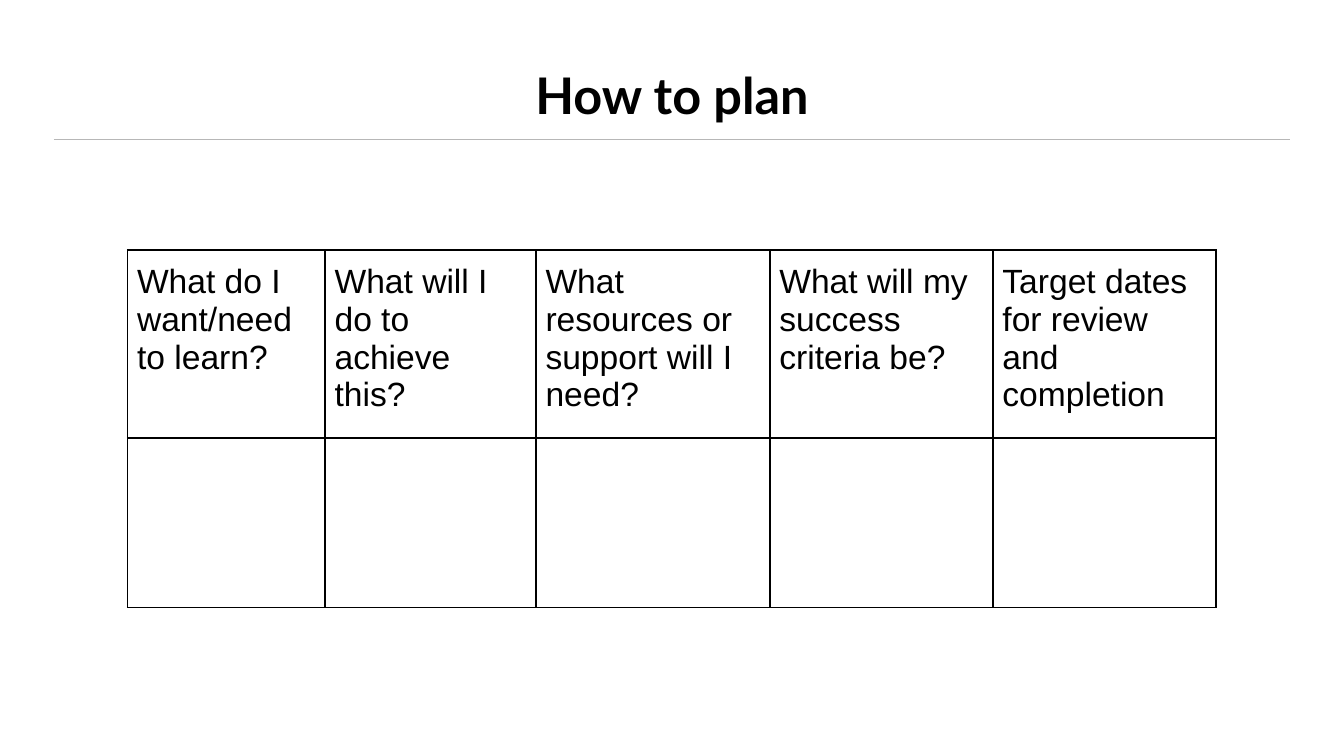
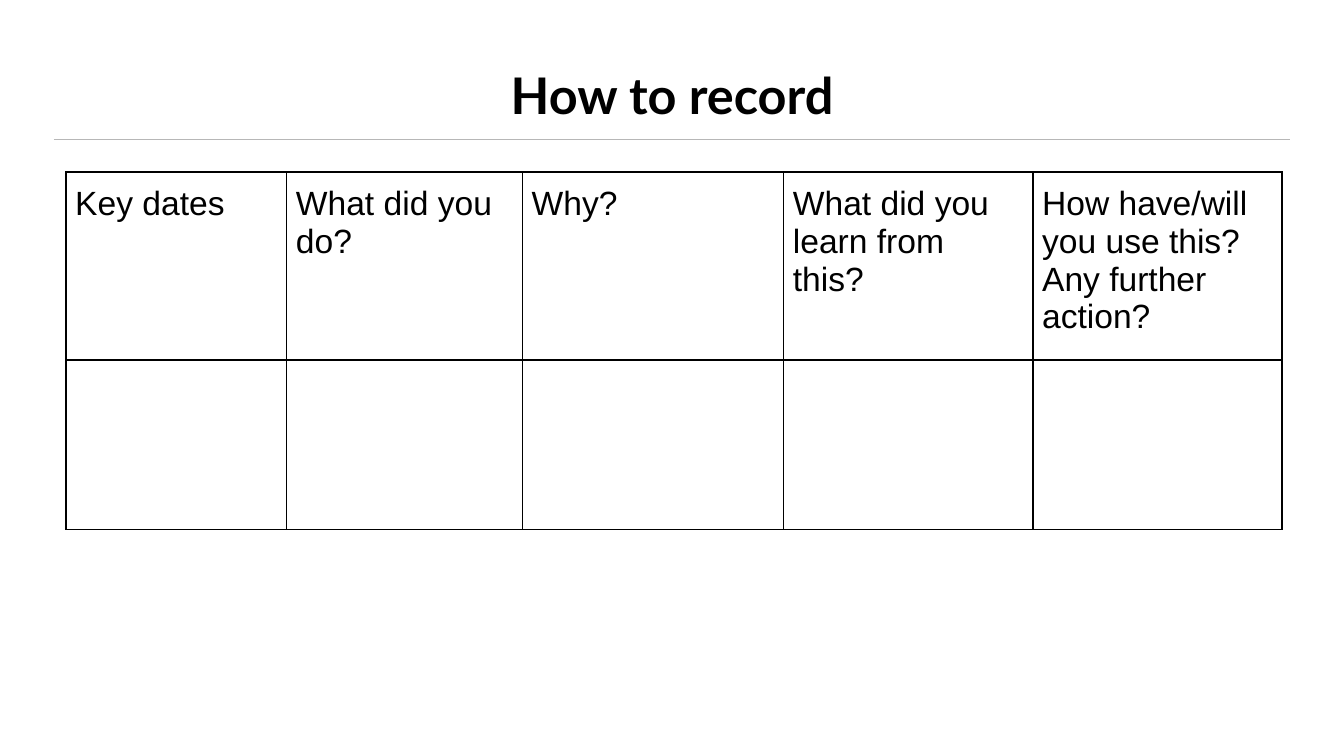
from dataclasses import dataclass

from lxml.etree import SubElement
from pptx import Presentation
from pptx.dml.color import RGBColor
from pptx.enum.shapes import MSO_CONNECTOR
from pptx.enum.text import MSO_ANCHOR, PP_ALIGN
from pptx.oxml.ns import qn
from pptx.util import Inches, Pt


@dataclass(frozen=True)
class Theme:
    background: str = "FFFFFF"
    text: str = "000000"
    rule: str = "B7B7B7"
    border: str = "000000"
    title_font: str = "Lato"
    body_font: str = "Arial"
    title_size: int = 27
    body_size: int = 18
    rule_width: float = 0.75
    border_width: float = 1


SLIDE_WIDTH = 10
COLUMN_SHARES = (1.47, 1.57, 1.74, 1.66, 1.66)
ENTRY_HEIGHT = 1.26
FRAME_SIDE = 3.28

# title, table left, top and width, heading row height, headings
SLIDES = (
    ("How to plan", 0.95, 1.86, 8.1, 0.53, (
        "What do I want/need to learn?",
        "What will I do to achieve this?",
        "What resources or support will I need?",
        "What will my success criteria be?",
        "Target dates for review and completion",
    )),
    ("How to record", 0.49, 1.28, 9.05, 1.28, (
        "Key dates",
        "What did you do?",
        "Why?",
        "What did you learn from this?",
        "How have/will you use this?\nAny further action?",
    )),
)


def write(tf, text, font, size, color, bold=False, align=PP_ALIGN.LEFT):
    """Fill a text frame, one paragraph per line of text."""
    tf.text = text
    for p in tf.paragraphs:
        p.alignment = align
        for r in p.runs:
            r.font.name = font
            r.font.size = Pt(size)
            r.font.bold = bold
            r.font.color.rgb = RGBColor.from_string(color)


def set_borders(cell, color, width):
    tc_pr = cell._tc.get_or_add_tcPr()
    for i, side in enumerate(("lnL", "lnR", "lnT", "lnB")):
        ln = SubElement(tc_pr, qn(f"a:{side}"), w=str(Pt(width)))
        fill = SubElement(ln, qn("a:solidFill"))
        SubElement(fill, qn("a:srgbClr"), val=color)
        tc_pr.insert(i, ln)  # borders come before the cell fill


class Deck:
    def __init__(self, theme):
        self.theme = theme
        self.prs = Presentation()
        self.prs.slide_width = Inches(SLIDE_WIDTH)
        self.prs.slide_height = Inches(SLIDE_WIDTH * 9 / 16)
        self.s = None

    def slide(self, title):
        self.s = self.prs.slides.add_slide(self.prs.slide_layouts[6])
        fill = self.s.background.fill
        fill.solid()
        fill.fore_color.rgb = RGBColor.from_string(self.theme.background)
        self.rule(0.4, 9.6, 1.04)
        self.title(title)

    def rule(self, left, right, y):
        line = self.s.shapes.add_connector(
            MSO_CONNECTOR.STRAIGHT,
            Inches(left), Inches(y), Inches(right), Inches(y))
        line.line.color.rgb = RGBColor.from_string(self.theme.rule)
        line.line.width = Pt(self.theme.rule_width)
        SubElement(line._element.spPr, qn("a:effectLst"))

    def title(self, text):
        t = self.theme
        sp = self.s.shapes.add_textbox(
            Inches(0.5), Inches(0.23), Inches(9), Inches(0.94))
        tf = sp.text_frame
        tf.word_wrap = True
        tf.vertical_anchor = MSO_ANCHOR.MIDDLE
        tf.margin_left = tf.margin_right = Inches(0.07)
        tf.margin_top = tf.margin_bottom = Inches(0.07)
        write(tf, text, t.title_font, t.title_size, t.text,
              bold=True, align=PP_ALIGN.CENTER)

    def table(self, left, top, width, heading_height, headings):
        """Draw a row of headings over an empty row to fill in."""
        t = self.theme
        row_heights = (heading_height, ENTRY_HEIGHT)
        frame = self.s.shapes.add_table(
            len(row_heights), len(headings), Inches(left), Inches(top),
            Inches(FRAME_SIDE), Inches(FRAME_SIDE))
        table = frame.table
        table.first_row = table.horz_banding = False
        for column, share in zip(table.columns, COLUMN_SHARES):
            column.width = Inches(width * share / sum(COLUMN_SHARES))
        for row, height in zip(table.rows, row_heights):
            row.height = Inches(height)
        # The frame keeps its own size; the rows grow with their text.
        frame.width = frame.height = Inches(FRAME_SIDE)
        for cell in table.iter_cells():
            cell.fill.background()
            cell.margin_left = cell.margin_right = Inches(0.07)
            cell.margin_top = cell.margin_bottom = Inches(0.1)
            set_borders(cell, t.border, t.border_width)
        for cell, heading in zip(table.rows[0].cells, headings):
            write(cell.text_frame, heading, t.body_font, t.body_size, t.text)


def main():
    deck = Deck(Theme())
    for title, *table in SLIDES:
        deck.slide(title)
        deck.table(*table)
    deck.prs.save("out.pptx")


if __name__ == "__main__":
    main()
